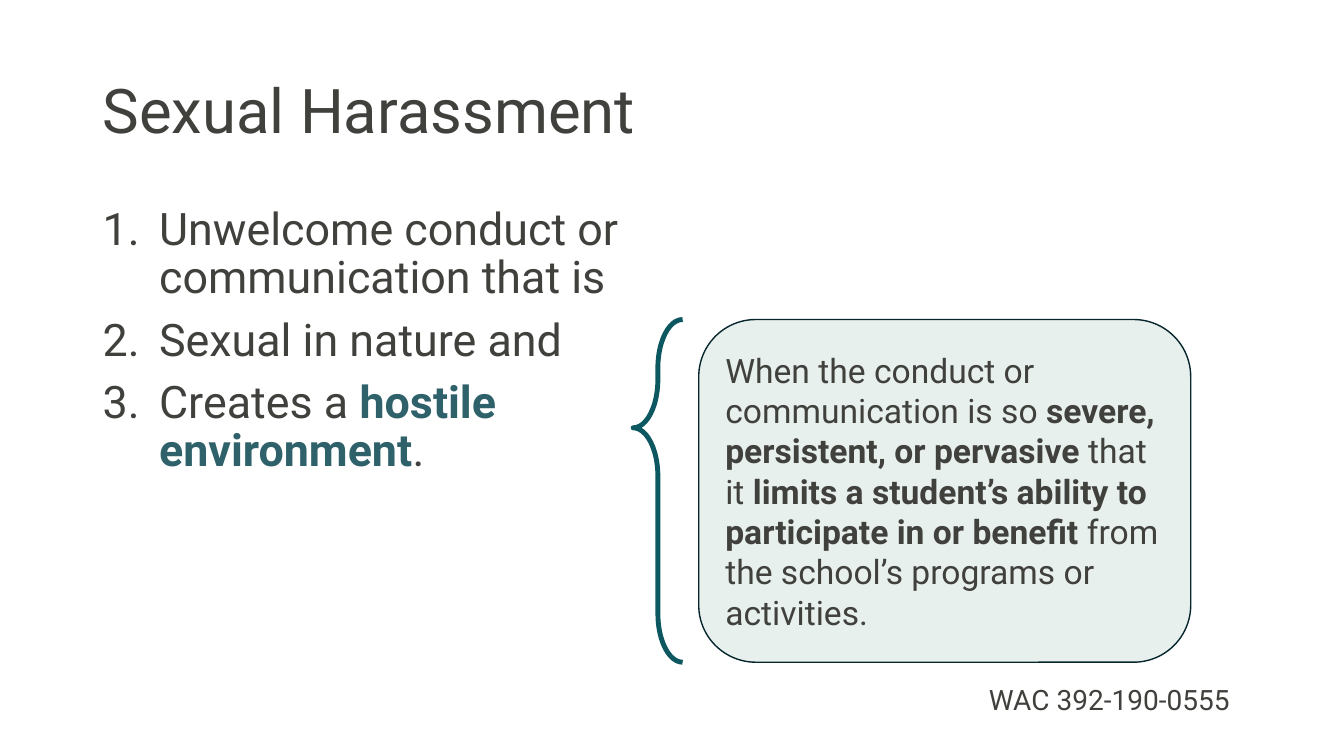
from dataclasses import dataclass

from lxml.etree import SubElement
from pptx import Presentation
from pptx.dml.color import RGBColor
from pptx.enum.shapes import MSO_SHAPE as Preset
from pptx.enum.text import MSO_ANCHOR as Anchor, MSO_AUTO_SIZE as AutoSize
from pptx.oxml.ns import qn
from pptx.shapes.autoshape import Shape
from pptx.slide import Slide
from pptx.text.text import TextFrame
from pptx.util import Inches, Pt

FONT = "Roboto"
COLORS = {
    "text": "40403D",
    "accent": "2E6169",
    "brace": "0D5761",
    "callout": "E8F0EE",
    "outline": "06262B",
}


@dataclass(frozen=True)
class Span:
    text: str
    bold: bool = False
    color: str = "text"


@dataclass(frozen=True)
class Box:
    left: float
    top: float
    width: float
    height: float

    def inches(self) -> tuple[Inches, ...]:
        return tuple(Inches(v) for v in (self.left, self.top, self.width, self.height))


TITLE_BOX = Box(0.92, 0.4, 11.5, 1.45)
CRITERIA_BOX = Box(0.92, 2, 5.67, 4.57)
CITATION_BOX = Box(9.71, 6.72, 2.71, 0.44)
BRACE_BOX = Box(6.28, 3.17, 0.49, 3.4)
DEFINITION_BOX = Box(6.93, 3.17, 4.88, 3.4)

CRITERIA = [
    [Span("Unwelcome conduct or communication that is")],
    [Span("Sexual in nature and")],
    [Span("Creates a "), Span("hostile environment", True, "accent"), Span(".")],
]
DEFINITION = [
    Span("When the conduct or communication is so "),
    Span("severe, persistent, or pervasive", True),
    Span(" that it "),
    Span("limits a student’s ability to participate in or benefit ", True),
    Span("from the school’s programs or activities."),
]


def rgb(name: str) -> RGBColor:
    return RGBColor.from_string(COLORS[name])


def write(frame: TextFrame, paragraphs: list[list[Span]], *, size: float,
          anchor: Anchor = Anchor.TOP, line_spacing: float = 1.0,
          gap: float = 0, number_indent: float = 0) -> None:
    """Fill a frame with paragraphs, numbered if number_indent is given."""
    frame.word_wrap = True
    frame.vertical_anchor = anchor
    for index, spans in enumerate(paragraphs):
        paragraph = frame.add_paragraph() if index else frame.paragraphs[0]
        if number_indent:
            props = paragraph._p.get_or_add_pPr()
            props.set("marL", str(Inches(number_indent)))
            props.set("indent", str(-Inches(number_indent)))
            SubElement(props, qn("a:buFont"), typeface="+mj-lt")
            SubElement(props, qn("a:buAutoNum"), type="arabicPeriod")
        paragraph.line_spacing = line_spacing
        if index:
            paragraph.space_before = Pt(gap)
        for span in spans:
            run = paragraph.add_run()
            run.text = span.text
            run.font.name = FONT
            run.font.size = Pt(size)
            run.font.bold = span.bold
            run.font.color.rgb = rgb(span.color)


def add_text(slide: Slide, box: Box) -> TextFrame:
    return slide.shapes.add_textbox(*box.inches()).text_frame


def add_outlined(slide: Slide, preset: Preset, box: Box, line: str, width: float) -> Shape:
    shape = slide.shapes.add_shape(preset, *box.inches())
    shape.shadow.inherit = False
    shape.fill.background()
    shape.line.color.rgb = rgb(line)
    shape.line.width = Pt(width)
    return shape


def main() -> None:
    deck = Presentation()
    deck.slide_width, deck.slide_height = Inches(13.33), Inches(7.5)
    slide = deck.slides.add_slide(deck.slide_layouts[6])

    write(add_text(slide, TITLE_BOX), [[Span("Sexual Harassment")]],
          size=44, anchor=Anchor.MIDDLE, line_spacing=0.9)
    write(add_text(slide, CRITERIA_BOX), CRITERIA,
          size=32, line_spacing=0.9, gap=10, number_indent=0.56)
    citation = add_text(slide, CITATION_BOX)
    write(citation, [[Span("WAC 392-190-0555")]], size=20)
    citation.auto_size = AutoSize.SHAPE_TO_FIT_TEXT

    brace = add_outlined(slide, Preset.LEFT_BRACE, BRACE_BOX, "brace", 3.5)
    brace.adjustments[0] = 0.98
    brace.adjustments[1] = 0.316

    definition = add_outlined(slide, Preset.ROUNDED_RECTANGLE, DEFINITION_BOX, "outline", 1)
    definition.fill.solid()
    definition.fill.fore_color.rgb = rgb("callout")
    write(definition.text_frame, [DEFINITION], size=24, anchor=Anchor.MIDDLE)
    definition.text_frame.paragraphs[0].alignment = 1

    deck.save("out.pptx")


if __name__ == "__main__":
    main()
